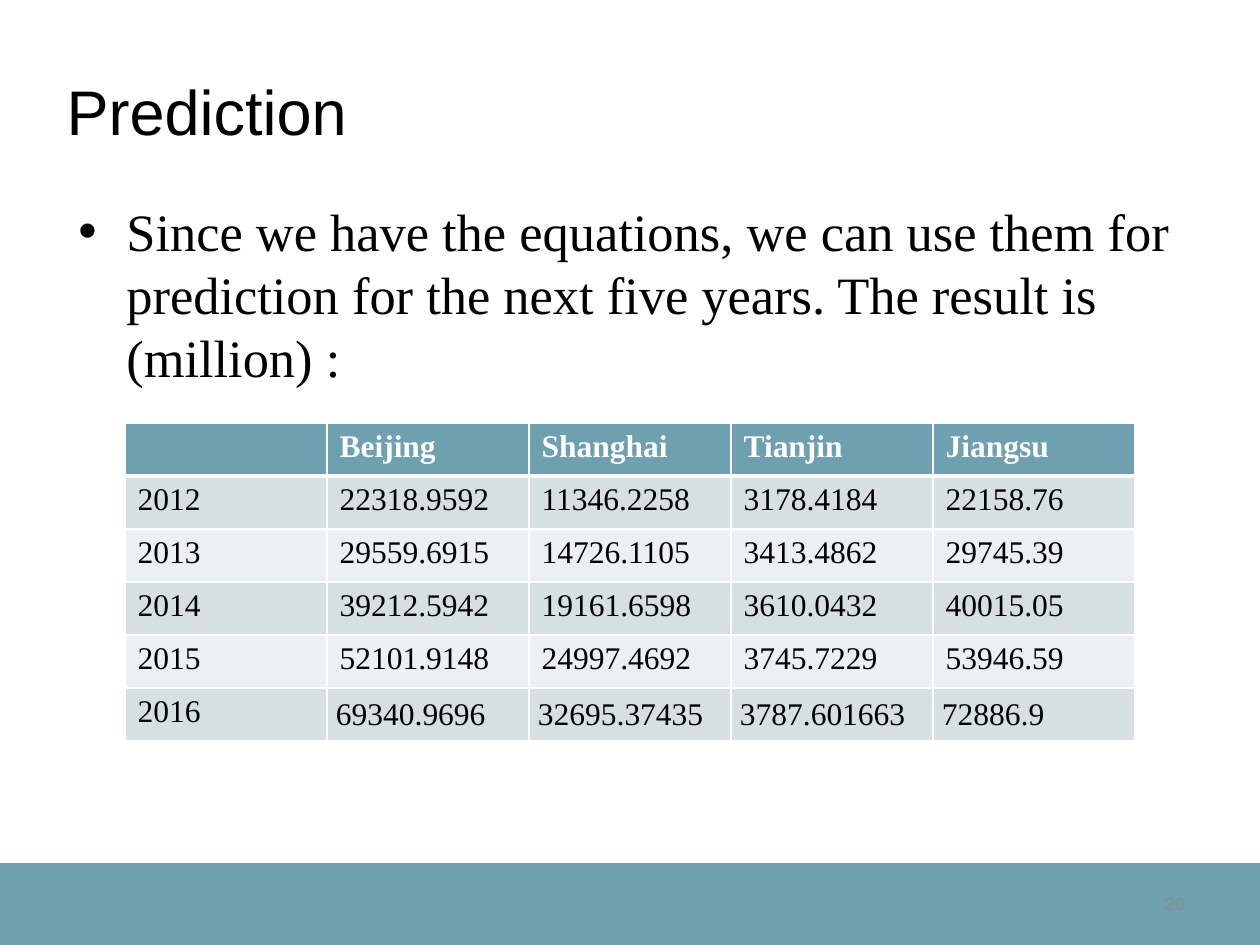
from dataclasses import dataclass

from lxml import etree
from pptx import Presentation, util as u
from pptx.dml.color import RGBColor
from pptx.enum import shapes, text
from pptx.oxml.ns import qn


@dataclass(frozen=True)
class Theme:
    """Colours, fonts and type sizes."""
    teal: str = "6EA0B0"
    bands: tuple = ("D5DFE4", "EBF0F2")
    white: str = "FFFFFF"
    black: str = "000000"
    gray: str = "8B8B8B"
    sans: str = "Arial"
    serif: str = "Times New Roman"
    head: int = 36
    body: int = 30
    cell: int = 18
    page: int = 10


def px(n):
    """Turn pixels into EMU."""
    return u.Emu(round(n * 914400 / 126))


def box(*nums):
    """Turn a list of pixel lengths into EMU."""
    return [px(n) for n in nums]


def put(item, **vals):
    """Set each attribute on an item."""
    for name, val in vals.items():
        setattr(item, name, val)


class Deck:
    """Hold the style and the current slide."""

    def __init__(self, theme):
        """Open a deck with one title-only slide."""
        self.theme = theme
        self.file = Presentation()
        put(self.file, slide_width=px(1260), slide_height=px(945))
        self.slide = self.file.slides.add_slide(self.file.slide_layouts[5])
        self.items = self.slide.shapes

    def words(self, frame, copy, color, **font):
        """Put one formatted paragraph into a frame."""
        para = frame.paragraphs[0]
        run = para.add_run()
        run.text = copy
        put(run.font, **font)
        run.font.color.rgb = RGBColor.from_string(color)
        return para

    def paint(self, item, color):
        """Give an item a solid fill."""
        item.fill.solid()
        item.fill.fore_color.rgb = RGBColor.from_string(color)

    def strip(self, *area):
        """Draw a plain coloured strip."""
        bar = self.items.add_shape(shapes.MSO_SHAPE.RECTANGLE, *box(*area))
        bar.shadow.inherit = False
        self.paint(bar, self.theme.teal)
        bar.line.fill.background()

    def title(self, copy, *area):
        """Move and fill the title placeholder."""
        head = self.items.title
        put(head, **dict(zip(("left", "top", "width", "height"), box(*area))))
        put(head.text_frame, word_wrap=True, vertical_anchor=text.MSO_ANCHOR.MIDDLE)
        para = self.words(head.text_frame, copy, self.theme.black,
                          name=self.theme.sans, size=u.Pt(self.theme.head))
        para.alignment = text.PP_ALIGN.LEFT

    def label(self, copy, color, area, **font):
        """Add a wrapped text box and return its paragraph."""
        frame = self.items.add_textbox(*box(*area)).text_frame
        frame.word_wrap = True
        return self.words(frame, copy, color, **font)

    def bullet(self, copy, *area):
        """Add a bulleted paragraph with a hanging indent."""
        para = self.label(copy, self.theme.black, area,
                          name=self.theme.serif, size=u.Pt(self.theme.body))
        put(para, line_spacing=u.Pt(36), space_before=u.Pt(6))
        props = para._p.get_or_add_pPr()
        props.set("marL", str(px(48)))
        props.set("indent", str(px(-48)))
        etree.SubElement(props, qn("a:buFont"), typeface=self.theme.sans)
        etree.SubElement(props, qn("a:buChar"), char="•")

    def number(self, copy, *area):
        """Add the page number."""
        para = self.label(copy, self.theme.gray, area,
                          name=self.theme.sans, size=u.Pt(self.theme.page))
        para.alignment = text.PP_ALIGN.RIGHT

    def edge(self, cell, **sides):
        """Draw white cell borders, widths in points."""
        props = cell._tc.get_or_add_tcPr()
        for spot, (side, width) in enumerate(sides.items()):
            line = etree.Element(qn("a:ln" + side), w=str(u.Pt(width)))
            fill = etree.SubElement(line, qn("a:solidFill"))
            etree.SubElement(fill, qn("a:srgbClr"), val=self.theme.white)
            props.insert(spot, line)

    def table(self, rows, left, top, wide, high):
        """Add a banded table with equal cells."""
        look = self.theme
        count, span = len(rows), len(rows[0])
        grid = self.items.add_table(
            count, span, *box(left, top, wide * span, high * count)).table
        for r, row in enumerate(rows):
            for c, copy in enumerate(row):
                cell = grid.cell(r, c)
                first = r == 0
                self.paint(cell, look.teal if first else look.bands[(r - 1) % 2])
                self.edge(cell, L=1, R=1, T=3 if r == 1 else 1, B=3 if first else 1)
                if r == count - 1 and c:
                    put(cell, vertical_anchor=text.MSO_ANCHOR.MIDDLE, margin_left=px(9),
                        margin_right=px(9), margin_top=0, margin_bottom=0)
                if copy:
                    self.words(cell.text_frame, copy, look.white if first else look.black,
                               name=look.serif, size=u.Pt(look.cell), bold=first)


def main():
    """Build and save the slide."""
    deck = Deck(Theme())
    deck.strip(-10, 863, 1281, 82)
    deck.title("Prediction", 54, 66, 1134, 88)
    deck.bullet("Since we have the equations, we can use them for prediction "
                "for the next five years. The result is (million) :", 66, 193, 1134, 624)
    deck.table([
        ("", "Beijing", "Shanghai", "Tianjin", "Jiangsu"),
        ("2012", "22318.9592", "11346.2258", "3178.4184", "22158.76"),
        ("2013", "29559.6915", "14726.1105", "3413.4862", "29745.39"),
        ("2014", "39212.5942", "19161.6598", "3610.0432", "40015.05"),
        ("2015", "52101.9148", "24997.4692", "3745.7229", "53946.59"),
        ("2016", "69340.9696", "32695.37435", "3787.601663", "72886.9"),
    ], 125, 423, 202, 53)
    deck.number("20", 1071, 887, 126, 32)
    deck.file.save("out.pptx")


if __name__ == "__main__":
    main()
